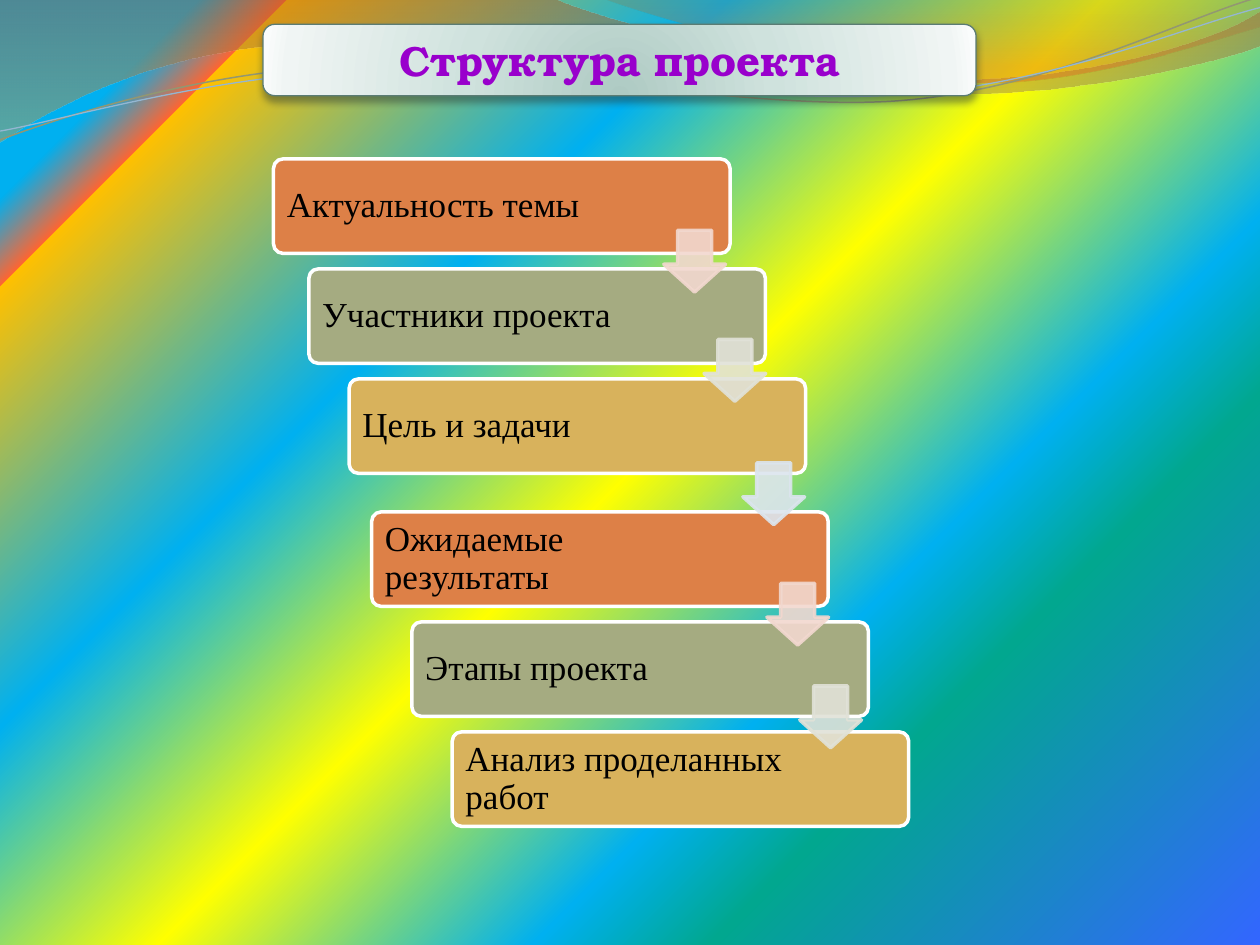
import itertools

import lxml.etree
import pptx
import pptx.dml.color
import pptx.enum.shapes
import pptx.enum.text
import pptx.oxml
import pptx.oxml.ns
import pptx.util

Pt = pptx.util.Pt
SHAPE = pptx.enum.shapes.MSO_SHAPE
qn = pptx.oxml.ns.qn
NAMESPACE = pptx.oxml.ns.nsdecls("a")

COLORS = {
    "orange": "DD8047", "sage": "A5AB81", "sand": "D8B25C",
    "pale orange": "F2D8CF", "pale sage": "E1E2D8", "pale blue": "DCE5EE",
    "white": "FFFFFF", "text": "000000", "title": "9900CC",
    "title edge": "5B7C74", "shadow": "2B3B37",
    "olive line": "929772", "blue line": "94B6D2",
}
RAINBOW = [(0, "00B0F0", 100), (9, "00B0F0", 100), (13, "FF6633", 100),
           (13, "FFC000", 100), (33, "00B0F0", 100), (50, "FFFF00", 100),
           (67, "00B0F0", 100), (75, "01A78F", 100), (100, "3366FF", 100)]
BACK_WAVE = [(0, "AF5C29", 45), (100, "9DA66B", 55)]
FRONT_WAVE = [(0, "7D835B", 30), (80, "DD6B24", 45), (100, "DD6B24", 45)]
TITLE_GLOSS = [(0, "AECAC3", 100), (43, "CFE2DD", 100),
               (93, "F0F5F4", 100), (100, "FAFCFC", 100)]
LINEAR = '<a:lin ang="{}" scaled="0"/>'
RADIAL = ('<a:path path="circle"><a:fillToRect l="50000" t="130000" '
          'r="50000" b="-30000"/></a:path>')


def rgb(name):
    return pptx.dml.color.RGBColor.from_string(COLORS[name])


def set_gradient(fill, stops, direction):
    fill.gradient()
    gradient = fill._fill._gradFill
    for child in list(gradient):
        gradient.remove(child)
    stop_xml = "".join(
        f'<a:gs pos="{place * 1000}"><a:srgbClr val="{color}">'
        f'<a:alpha val="{alpha * 1000}"/></a:srgbClr></a:gs>'
        for place, color, alpha in stops)
    parts = pptx.oxml.parse_xml(
        f"<a:gradFill {NAMESPACE}><a:gsLst>{stop_xml}</a:gsLst>"
        f"{direction}</a:gradFill>")
    for child in list(parts):
        gradient.append(child)


def set_alpha(fill, percent):
    for color in fill._xPr.iter(qn("a:srgbClr")):
        lxml.etree.SubElement(color, qn("a:alpha")).set("val", str(percent * 1000))


def add_curve(page, start, segments, closed):
    anchors = [(Pt(segment[-2]), Pt(segment[-1])) for segment in segments]
    builder = page.shapes.build_freeform(Pt(start[0]), Pt(start[1]))
    builder.add_line_segments(anchors, close=closed)
    shape = builder.convert_to_shape()
    shape.shadow.inherit = False
    for line, segment in zip(list(shape._element.iter(qn("a:lnTo"))), segments):
        if len(segment) == 6:
            line.tag = qn("a:cubicBezTo")
            line.remove(line[0])
            for x, y in zip(segment[::2], segment[1::2]):
                point = lxml.etree.SubElement(line, qn("a:pt"))
                point.set("x", str(Pt(x) - shape.left))
                point.set("y", str(Pt(y) - shape.top))
    return shape


def add_waves(deck, page, left, top, width):
    right = left + width
    back = [(left + 316.8, top - 0.7),
            (342.7, 12.2, 478.1, 45.4, 545.8, 45.4),
            (614.2, 45.4, 689.8, 26.6, right, 6.5), (right + 0.7, 25.9),
            (707.8, 31.7, 626.4, 54.7, 537.1, 54),
            (447.8, 54, 275, 20.2, 185, 24.5),
            (92.9, 25.9, 33.1, 59.8, left - 0.7, 81.4)]
    front = [(366.5, 7.9, 491, 44.6, 553.7, 46.8),
             (616.3, 49.7, 691.9, 23, right, 15.1), (right, top)]
    olive = [(34.6, 67, 113.8, 41, 199.4, 37.4),
             (284.4, 33.8, 427, 64.1, 513.4, 57.6),
             (599.8, 51.1, 675.4, 10.8, 718.6, -1.4)]
    blue = [(33.8, 69.1, 118.1, 43.9, 203.8, 40.3),
            (290.2, 36.7, 429.8, 60.5, 516.2, 54),
            (601.9, 48.2, 677.5, 15.1, right, 4.3)]
    waves = []
    for start, segments, stops in (((left, top), back, BACK_WAVE),
                                   ((left + 344.9, top - 0.7), front, FRONT_WAVE)):
        wave = add_curve(page, start, segments, True)
        set_gradient(wave.fill, stops, LINEAR.format(5400000))
        wave.line.fill.background()
        waves.append(wave)
    for start, segments, color, weight in (
            ((left, top + 79.9), olive, "olive line", 0.85),
            ((left, top + 74.9), blue, "blue line", 0.75)):
        strand = add_curve(page, start, segments, False)
        strand.fill.background()
        strand.line.color.rgb = rgb(color)
        strand.line.width = Pt(weight)
        waves.append(strand)
    for wave in waves:
        deck.slide_master.shapes._spTree.append(wave._element)


def add_title(page, left, top, width, height):
    title = page.shapes.add_shape(SHAPE.ROUNDED_RECTANGLE,
                                  Pt(left), Pt(top), Pt(width), Pt(height))
    set_gradient(title.fill, TITLE_GLOSS, RADIAL)
    title.line.color.rgb = rgb("title edge")
    title.line.width = Pt(0.75)
    title._element.spPr.append(pptx.oxml.parse_xml(
        f'<a:effectLst {NAMESPACE}><a:outerShdw blurRad="{Pt(4.5)}" '
        f'dist="{Pt(3)}" dir="5400000" rotWithShape="0">'
        f'<a:srgbClr val="{COLORS["shadow"]}"><a:alpha val="48000"/>'
        f'</a:srgbClr></a:outerShdw></a:effectLst>'))
    frame = title.text_frame
    frame.text = "Структура проекта"
    frame.vertical_anchor = pptx.enum.text.MSO_ANCHOR.MIDDLE
    para = frame.paragraphs[0]
    para.alignment = pptx.enum.text.PP_ALIGN.CENTER
    font = para.runs[0].font
    font.name, font.size, font.bold = "TeX Gyre Bonum", Pt(24), True
    font.color.rgb = rgb("title")


def add_step(shapes, label, color, left, top, width, height):
    box = shapes.add_shape(SHAPE.ROUNDED_RECTANGLE,
                           Pt(left), Pt(top), Pt(width), Pt(height))
    box.adjustments[0] = 0.1
    box.shadow.inherit = False
    box.fill.solid()
    box.fill.fore_color.rgb = rgb(color)
    box.line.color.rgb = rgb("white")
    box.line.width = Pt(2)
    caption = shapes.add_textbox(Pt(left + 1.6), Pt(top + 1.6),
                                 Pt(200), Pt(height - 3.2))
    frame = caption.text_frame
    frame.text = label
    frame.word_wrap = True
    frame.vertical_anchor = pptx.enum.text.MSO_ANCHOR.MIDDLE
    frame.margin_left = frame.margin_right = Pt(6)
    frame.margin_top = frame.margin_bottom = Pt(6)
    para = frame.paragraphs[0]
    para.line_spacing = 0.9
    font = para.runs[0].font
    font.name, font.size = "Times New Roman", Pt(20)
    font.color.rgb = rgb("text")


def add_arrow(shapes, color, left, top, size=35.3):
    arrow = shapes.add_shape(SHAPE.DOWN_ARROW, Pt(left), Pt(top), Pt(size), Pt(size))
    arrow.adjustments[0], arrow.adjustments[1] = 0.55, 0.45
    arrow.shadow.inherit = False
    arrow.fill.solid()
    arrow.fill.fore_color.rgb = rgb(color)
    arrow.line.color.rgb = rgb(color)
    arrow.line.width = Pt(2)
    set_alpha(arrow.fill, 90)
    set_alpha(arrow.line.fill, 90)


def add_staircase(page, left, top, labels, indents, arrows):
    shapes = page.shapes.add_group_shape().shapes
    for row, (label, color, indent) in enumerate(
            zip(labels, ("orange", "sage", "sand"), indents)):
        add_step(shapes, label, color, left + indent, top + row * 62.85, 260.9, 54)
    for (across, down), color in zip(arrows, itertools.cycle(("pale orange", "pale sage"))):
        add_arrow(shapes, color, left + across, top + down)


def main():
    deck = pptx.Presentation()
    deck.slide_width, deck.slide_height = Pt(720), Pt(540)
    page = deck.slides.add_slide(deck.slide_layouts[6])
    set_gradient(page.background.fill, RAINBOW, LINEAR.format(2700000))
    add_waves(deck, page, 0, 0, 720)
    add_title(page, 150.3, 13.9, 407.5, 40.8)
    add_staircase(page, 212.4, 292.5,
                  ("Ожидаемые результаты", "Этапы проекта", "Анализ проделанных работ"),
                  (0, 23, 46), ((225.8, 40.8), (244.6, 99.5)))
    add_staircase(page, 156.3, 90.8,
                  ("Актуальность темы", "Участники проекта", "Цель и задачи"),
                  (0, 20.2, 43.2), ((223, 40.8), (246, 103.2)))
    add_arrow(page.shapes, "pale blue", 424.5, 264.5)
    deck.save("out.pptx")


if __name__ == "__main__":
    main()
